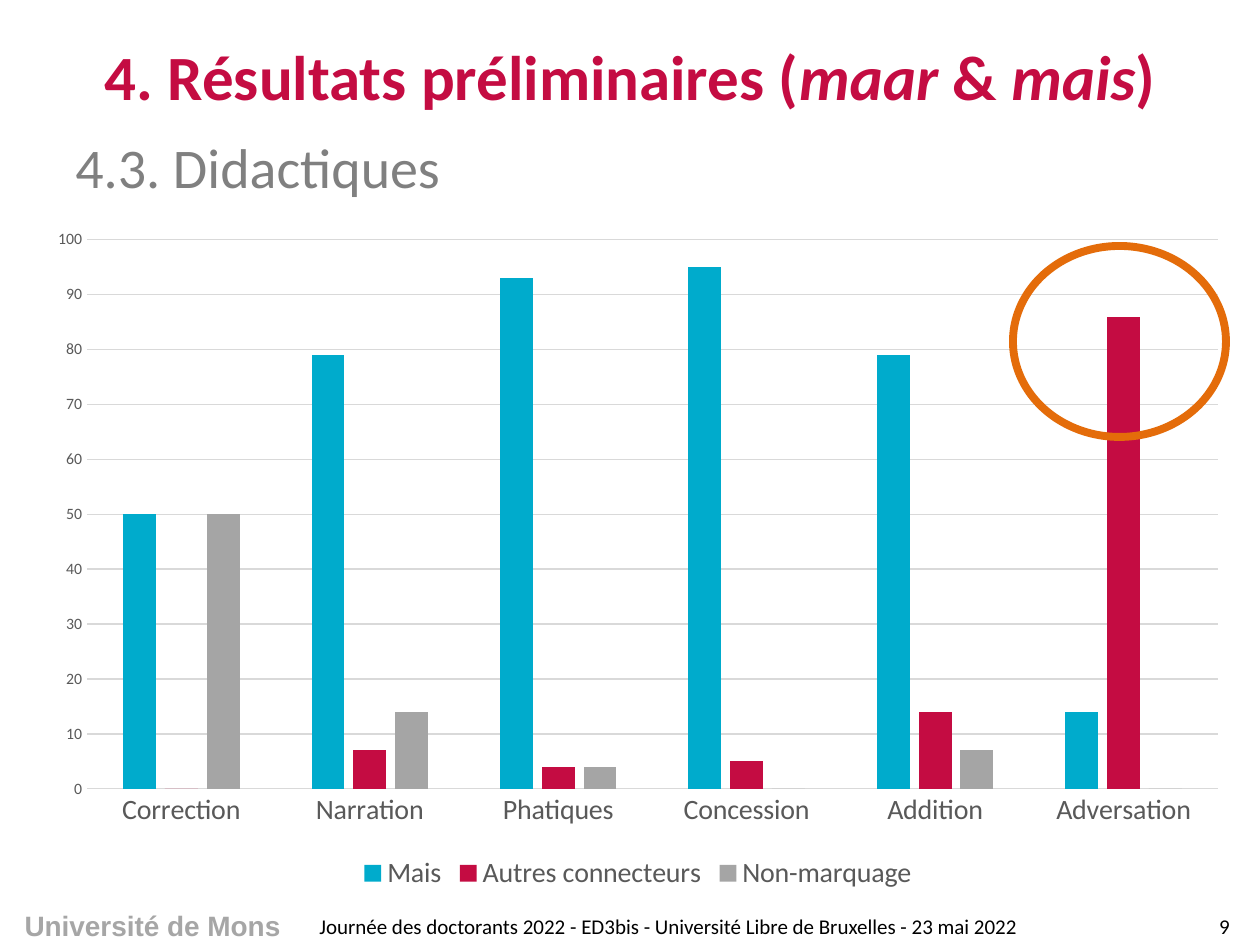
import pptx
import pptx.chart.data
import pptx.dml.color
import pptx.enum.chart
import pptx.enum.shapes
import pptx.enum.text
import pptx.util

WIDTH, HEIGHT = 1260, 945
SCALE = 914400 / 126
ALIGN = pptx.enum.text.PP_ALIGN
ANCHOR = pptx.enum.text.MSO_ANCHOR

THEME = {
    "font": "Calibri", "footer font": "Arial",
    "red": "C40C42", "blue": "00ABCC", "gray": "A5A5A5", "orange": "E46C0A",
    "heading": "808080", "footer": "A6A6A6", "ink": "000000",
    "label": "595959", "grid": "D9D9D9",
    "title size": 36, "heading size": 32, "label size": 16,
    "chart size": 10, "tick size": 9, "small size": 12,
    "hairline": 0.75, "ring line": 4.5,
}

TITLE = [("4. Résultats préliminaires (", False), ("maar", True), (" & ", False),
         ("mais", True), (")", False)]
# text, (left, top, width, height), font, size, colour, bold, alignment, anchor
TEXTS = [
    ("Université de Mons", (-1, 902, 307, 47), "footer font", "label size",
     "footer", True, ALIGN.CENTER, ANCHOR.TOP),
    ("4.3. Didactiques", (63, 126, 1134, 769), "font", "heading size",
     "heading", False, ALIGN.LEFT, ANCHOR.TOP),
    ("9", (1189, 907, 71, 38), "font", "small size",
     "ink", False, ALIGN.CENTER, ANCHOR.MIDDLE),
    ("Journée des doctorants 2022 - ED3bis - Université Libre de Bruxelles - 23 mai 2022",
     (307, 907, 882, 38), "font", "small size",
     "ink", False, ALIGN.LEFT, ANCHOR.MIDDLE),
]
TITLE_AREA = (63, 38, 1134, 158)
CHART_AREA = (34, 217, 1208, 679)
RING_AREA = (1013, 246, 213, 191)
CATEGORIES = ["Correction", "Narration", "Phatiques", "Concession", "Addition", "Adversation"]
SERIES = [
    ("Mais", (50, 79, 93, 95, 79, 14), "blue"),
    ("Autres connecteurs", (0, 7, 4, 5, 14, 86), "red"),
    ("Non-marquage", (50, 14, 4, 0, 7, 0), "gray"),
]


def px(length):
    return pptx.util.Emu(round(length * SCALE))


def area(lengths):
    return [px(length) for length in lengths]


def colour(name):
    return pptx.dml.color.RGBColor.from_string(THEME[name])


def set_all(target, values):
    for name, value in values.items():
        setattr(target, name, value)


def style_font(font, size, shade, face="font", **extra):
    set_all(font, {"name": THEME[face], "size": pptx.util.Pt(THEME[size]), **extra})
    font.color.rgb = colour(shade)


def style_line(line, shade, width):
    line.color.rgb = colour(shade)
    line.width = pptx.util.Pt(THEME[width])


def add_title(page):
    box = page.shapes.title
    set_all(box, dict(zip(("left", "top", "width", "height"), area(TITLE_AREA))))
    set_all(box.text_frame, {"vertical_anchor": ANCHOR.TOP, "word_wrap": True, "margin_top": 0,
                             "auto_size": pptx.enum.text.MSO_AUTO_SIZE.NONE})
    para = box.text_frame.paragraphs[0]
    para.alignment = ALIGN.CENTER
    for text, italic in TITLE:
        span = para.add_run()
        span.text = text
        style_font(span.font, "title size", "red", bold=True, italic=italic)


def add_text(page, text, place, face, size, shade, bold, align, anchor):
    frame = page.shapes.add_textbox(*area(place)).text_frame
    set_all(frame, {"word_wrap": True, "vertical_anchor": anchor})
    para = frame.paragraphs[0]
    para.alignment = align
    span = para.add_run()
    span.text = text
    style_font(span.font, size, shade, face, bold=bold)


def add_chart(page):
    data = pptx.chart.data.CategoryChartData()
    data.categories = CATEGORIES
    for name, values, _ in SERIES:
        data.add_series(name, values)
    kind = pptx.enum.chart.XL_CHART_TYPE.COLUMN_CLUSTERED
    chart = page.shapes.add_chart(kind, *area(CHART_AREA), data).chart
    set_all(chart, {"has_title": False, "has_legend": True})
    style_font(chart.font, "chart size", "ink")
    set_all(chart.legend, {"position": pptx.enum.chart.XL_LEGEND_POSITION.BOTTOM,
                           "include_in_layout": False})
    style_font(chart.legend.font, "label size", "label")

    plot = chart.plots[0]
    set_all(plot, {"gap_width": 219, "overlap": -27, "vary_by_categories": False})
    for series, (_, _, shade) in zip(plot.series, SERIES):
        series.format.fill.solid()
        series.format.fill.fore_color.rgb = colour(shade)

    no_tick = pptx.enum.chart.XL_TICK_MARK.NONE
    for axis, size in ((chart.category_axis, "label size"), (chart.value_axis, "tick size")):
        set_all(axis, {"major_tick_mark": no_tick, "minor_tick_mark": no_tick})
        style_font(axis.tick_labels.font, size, "label")
    style_line(chart.category_axis.format.line, "grid", "hairline")
    set_all(chart.value_axis, {"minimum_scale": 0, "maximum_scale": 100, "major_unit": 10,
                               "has_major_gridlines": True})
    chart.value_axis.format.line.fill.background()
    style_line(chart.value_axis.major_gridlines.format.line, "grid", "hairline")


def add_ring(page):
    ring = page.shapes.add_shape(pptx.enum.shapes.MSO_SHAPE.OVAL, *area(RING_AREA))
    ring.shadow.inherit = False
    ring.fill.background()
    style_line(ring.line, "orange", "ring line")


def main():
    deck = pptx.Presentation()
    set_all(deck, {"slide_width": px(WIDTH), "slide_height": px(HEIGHT)})
    page = deck.slides.add_slide(deck.slide_layouts.get_by_name("Title Only"))
    add_title(page)
    for entry in TEXTS:
        add_text(page, *entry)
    add_chart(page)
    add_ring(page)
    deck.save("out.pptx")


if __name__ == "__main__":
    main()
